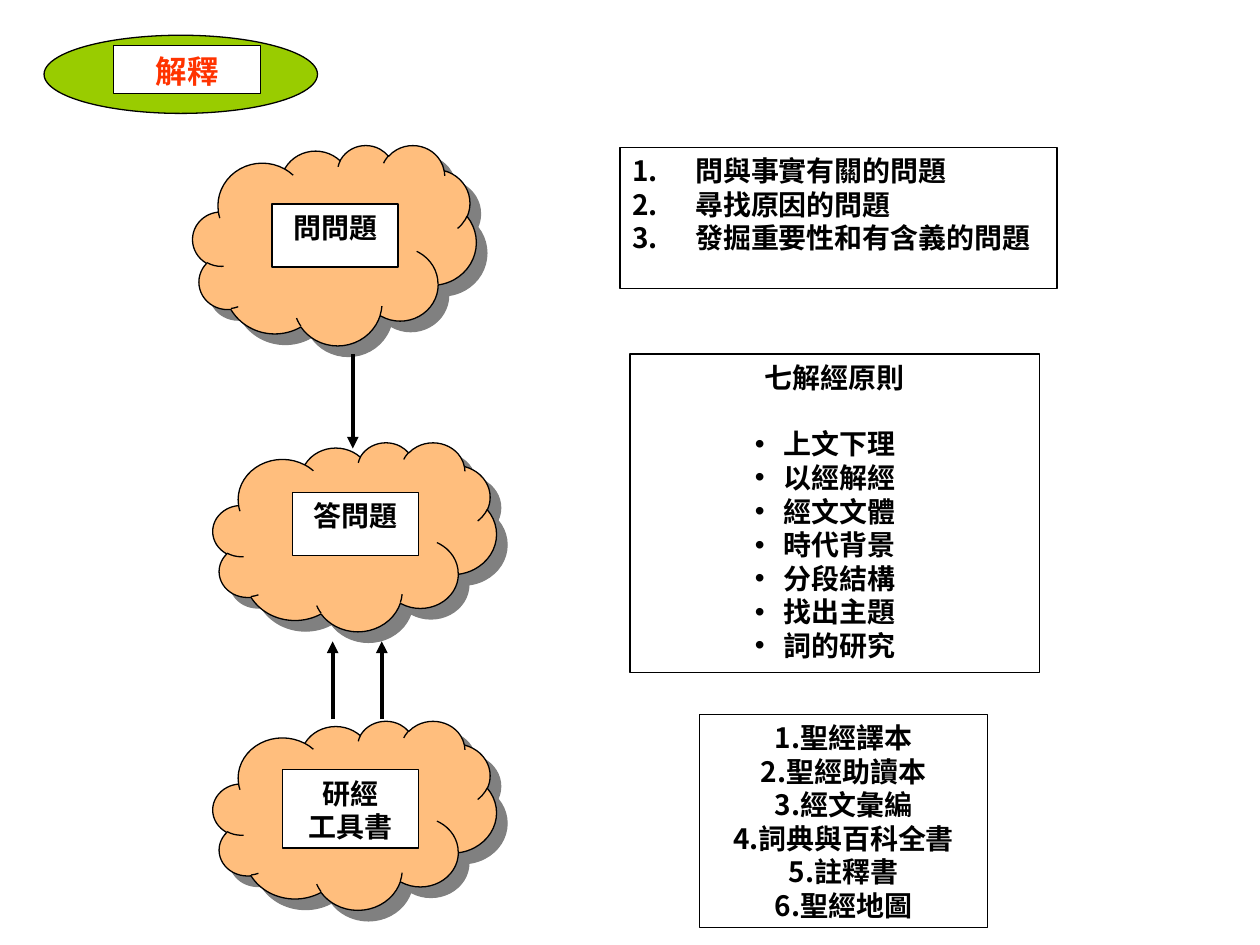
from lxml import etree
from pptx import Presentation
from pptx.dml.color import RGBColor
from pptx.enum import shapes, text
from pptx.oxml.ns import qn
from pptx.util import Inches, Pt

BLACK = RGBColor(0x00, 0x00, 0x00)
WHITE = RGBColor(0xFF, 0xFF, 0xFF)
PEACH = RGBColor(0xFF, 0xBE, 0x7D)
GREEN = RGBColor(0x99, 0xCC, 0x00)
RED = RGBColor(0xFF, 0x33, 0x00)
SHADOW = "808080"

QUESTIONS = ["問與事實有關的問題", "尋找原因的問題", "發掘重要性和有含義的問題"]
PRINCIPLES = ["上文下理", "以經解經", "經文文體", "時代背景", "分段結構", "找出主題", "詞的研究"]
TOOLS = ["聖經譯本", "聖經助讀本", "經文彙編", "詞典與百科全書", "註釋書", "聖經地圖"]

# cloud left, top, width, height; label left, top, width, height; label lines
STEPS = [
    ((1.53, 1.15, 2.25, 1.59), (2.16, 1.62, 1, 0.5), ["問問題"]),
    ((1.69, 3.51, 2.25, 1.5), (2.32, 3.91, 1, 0.5), ["答問題"]),
    ((1.69, 5.72, 2.25, 1.5), (2.24, 6.11, 1.08, 0.62), ["研經", "工具書"]),
]
# x, start y, end y
ARROWS = [(2.8, 2.81, 3.56), (2.64, 5.71, 5.09), (3.03, 5.71, 5.09)]


def add_shape(page, kind, place, fill):
    shape = page.shapes.add_shape(kind, *map(Inches, place))
    shape.shadow.inherit = False
    shape.fill.solid()
    shape.fill.fore_color.rgb = fill
    shape.line.color.rgb = BLACK
    shape.line.width = Pt(0.75)
    return shape


def add_cloud(page, place):
    cloud = add_shape(page, shapes.MSO_SHAPE.CLOUD, place, PEACH)
    effects = cloud._element.spPr.find(qn("a:effectLst"))
    shadow = etree.SubElement(effects, qn("a:outerShdw"), blurRad="0",
                              dist=str(Pt(8.5)), dir="2700000",
                              algn="ctr", rotWithShape="0")
    etree.SubElement(shadow, qn("a:srgbClr"), val=SHADOW)


def add_text(frame, content, first=False, size=16, font="Arial", color=BLACK,
             align=text.PP_ALIGN.CENTER):
    para = frame.paragraphs[0] if first else frame.add_paragraph()
    para.alignment = align
    para.font.size = Pt(size)
    if content:
        span = para.add_run()
        span.text = content
        span.font.size = Pt(size)
        span.font.name = font
        span.font.bold = True
        span.font.color.rgb = color
    return para


def add_box(page, place, lines, **style):
    """Draw a white bordered box and return its text frame."""
    box = add_shape(page, shapes.MSO_SHAPE.RECTANGLE, place, WHITE)
    frame = box.text_frame
    frame.word_wrap = True
    frame.vertical_anchor = text.MSO_ANCHOR.TOP
    for index, line in enumerate(lines):
        add_text(frame, line, first=index == 0, **style)
    return frame


def set_list(paras, numbered=True, hang=0, right=0):
    """Number or bullet paragraphs with a hanging indent."""
    for para in paras:
        props = para._p.get_or_add_pPr()
        props.set("marL", str(Inches(hang)))
        props.set("marR", str(Inches(right)))
        props.set("indent", str(-Inches(hang)))
        if numbered:
            etree.SubElement(props, qn("a:buFontTx"))
            mark = etree.SubElement(props, qn("a:buAutoNum"), type="arabicPeriod")
        else:
            etree.SubElement(props, qn("a:buFont"), typeface="Arial")
            mark = etree.SubElement(props, qn("a:buChar"), char="•")
        defaults = props.find(qn("a:defRPr"))
        if defaults is not None:
            mark.addnext(defaults)


def add_arrow(page, x, start, end):
    arrow = page.shapes.add_connector(shapes.MSO_CONNECTOR.STRAIGHT, Inches(x),
                                      Inches(start), Inches(x), Inches(end))
    arrow.line.color.rgb = BLACK
    arrow.line.width = Pt(2.25)
    etree.SubElement(arrow.line._get_or_add_ln(), qn("a:tailEnd"), type="triangle")
    etree.SubElement(arrow._element.spPr, qn("a:effectLst"))


def main():
    deck = Presentation()
    deck.slide_width, deck.slide_height = Inches(10), Inches(7.5)
    page = deck.slides.add_slide(deck.slide_layouts[6])

    add_shape(page, shapes.MSO_SHAPE.OVAL, (0.35, 0.28, 2.17, 0.62), GREEN)
    add_box(page, (0.9, 0.36, 1.17, 0.38), ["解釋"], size=18, color=RED)

    for cloud, label, lines in STEPS:
        add_cloud(page, cloud)
        add_box(page, label, lines)

    questions = add_box(page, (4.92, 1.17, 3.47, 1.12), QUESTIONS,
                        font="Times New Roman", align=text.PP_ALIGN.LEFT)
    set_list(questions.paragraphs, hang=0.5)

    principles = add_box(page, (5, 2.81, 3.25, 2.53), ["七解經原則"] + PRINCIPLES)
    principles.paragraphs[0].space_after = Pt(19)
    set_list(principles.paragraphs[1:], numbered=False, hang=0.23, right=0.15)

    tools = add_box(page, (5.55, 5.67, 2.29, 1.69), TOOLS, font="Times New Roman")
    set_list(tools.paragraphs)

    for x, start, end in ARROWS:
        add_arrow(page, x, start, end)

    deck.save("out.pptx")


if __name__ == "__main__":
    main()
